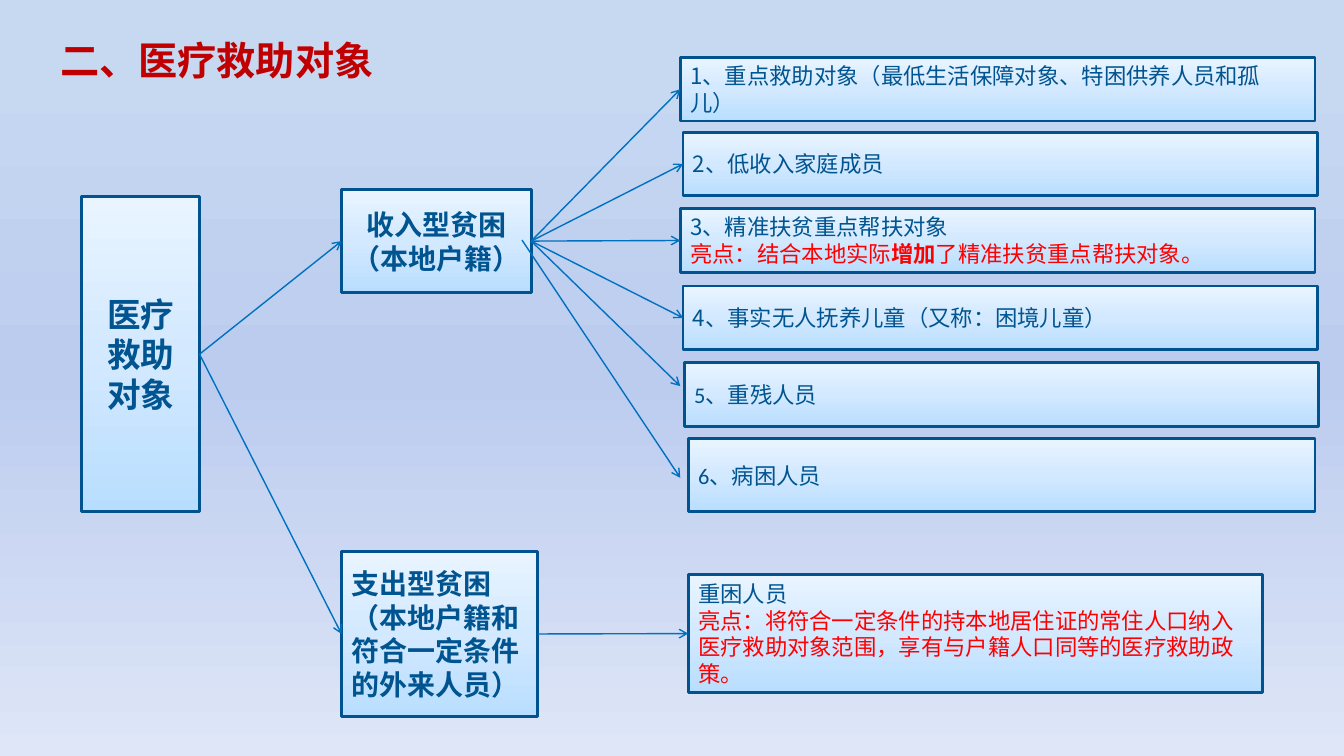
from lxml import etree
from pptx import Presentation
from pptx.dml.color import RGBColor
from pptx.enum.shapes import MSO_CONNECTOR, MSO_SHAPE
from pptx.enum.text import MSO_ANCHOR, MSO_AUTO_SIZE, PP_ALIGN
from pptx.oxml.ns import qn
from pptx.util import Cm, Pt

RECTANGLE = MSO_SHAPE.RECTANGLE
STRAIGHT = MSO_CONNECTOR.STRAIGHT
MIDDLE = MSO_ANCHOR.MIDDLE
GROW = MSO_AUTO_SIZE.SHAPE_TO_FIT_TEXT
LEFT, CENTER = PP_ALIGN.LEFT, PP_ALIGN.CENTER
LEFT_SIDE, RIGHT_SIDE = 1, 3

CJK_FONT = "Noto Sans CJK SC"
NAVY, RED, DARK_RED = "005490", "FF0000", "C00000"
BORDER, ARROW = "00538E", "0070C0"
BOX_STOPS = [(0, "B8DEFF"), (50, "D3E9FF"), (100, "E9F4FF")]
PAGE_STOPS = [(0, "C6D9F1"), (8, "C6D9F1"), (50, "BCCCEF"), (100, "DEE6F7")]

# Left, top, width, height in cm; paragraphs of (text, format) runs; font
CATEGORIES = [
    ((17.15, 1.45, 16, 1.6),
     [[("1、重点救助对象（最低生活保障对象、特困供养人员和孤儿）", {})]], CJK_FONT),
    ((17.22, 3.33, 16, 1.6), [[("2、低收入家庭成员", {})]], CJK_FONT),
    ((17.15, 5.26, 16, 1.6),
     [[("3、精准扶贫重点帮扶对象", {})],
      [("亮点：结合本地实际", {"color": RED}),
       ("增加", {"color": RED, "bold": True}),
       ("了精准扶贫重点帮扶对象。", {"color": RED})]], CJK_FONT),
    ((17.22, 7.21, 16, 1.6),
     [[("4、事实无人抚养儿童（又称：困境儿童）", {})]], CJK_FONT),
    ((17.25, 9.14, 15.98, 1.6), [[("5、重残人员", {})]], "Calibri"),
    ((17.35, 11.05, 15.8, 1.85), [[("6、病困人员", {})]], "Calibri"),
]
SEVERE_HARDSHIP = [
    [("重困人员", {})],
    [("亮点：将符合一定条件的持本地居住证的常住人口纳入医疗救助对象范围，"
      "享有与户籍人口同等的医疗救助政策。", {"color": RED})],
]


def rgb(color):
    return RGBColor.from_string(color)


def paint_gradient(owner, fill, angle, stops):
    """Fill with any number of stops; angle runs counter-clockwise."""
    fill.gradient()
    fill.gradient_angle = angle
    stop_list = owner.find(".//" + qn("a:gsLst"))
    for stop in list(stop_list):
        stop_list.remove(stop)
    for percent, color in stops:
        stop = etree.SubElement(stop_list, qn("a:gs"), pos=str(percent * 1000))
        etree.SubElement(stop, qn("a:srgbClr"), val=color)


def add_run(paragraph, text, size=16, color=NAVY, bold=False, font=CJK_FONT):
    run = paragraph.add_run()
    run.text = text
    run.font.size = Pt(size)
    run.font.bold = bold
    run.font.name = font
    run.font.color.rgb = rgb(color)
    etree.SubElement(run.font._element, qn("a:ea"), typeface=CJK_FONT)


def write_text(frame, paragraphs, align=LEFT, **base_format):
    for index, runs in enumerate(paragraphs):
        paragraph = frame.add_paragraph() if index else frame.paragraphs[0]
        paragraph.alignment = align
        for text, run_format in runs:
            add_run(paragraph, text, **{**base_format, **run_format})


def add_title(slide, text):
    title = slide.shapes.add_textbox(Cm(1.27), Cm(0.79), Cm(8.53), Cm(1.45))
    title.text_frame.word_wrap = False
    title.text_frame.auto_size = GROW
    write_text(title.text_frame, [[(text, {})]], size=28, color=DARK_RED, bold=True)


def add_box(slide, place, paragraphs, **text_format):
    box = slide.shapes.add_shape(RECTANGLE, *map(Cm, place))
    box.shadow.inherit = False
    paint_gradient(box._element, box.fill, 90, BOX_STOPS)
    box.line.color.rgb = rgb(BORDER)
    box.line.width = Pt(2)
    box.text_frame.word_wrap = True
    box.text_frame.vertical_anchor = MIDDLE
    write_text(box.text_frame, paragraphs, **text_format)
    return box


def add_arrow(slide, start=(0, 0), end=(0, 0), source=None, target=None):
    """Draw from start to end in cm; a given box replaces its point."""
    arrow = slide.shapes.add_connector(STRAIGHT, *map(Cm, (*start, *end)))
    if source is not None:
        arrow.begin_connect(source, RIGHT_SIDE)
    if target is not None:
        arrow.end_connect(target, LEFT_SIDE)
    arrow.line.color.rgb = rgb(ARROW)
    arrow.line.width = Pt(1)
    etree.SubElement(arrow.line._get_or_add_ln(), qn("a:tailEnd"), type="arrow")
    etree.SubElement(arrow._element.spPr, qn("a:effectLst"))


def main():
    deck = Presentation()
    deck.slide_width, deck.slide_height = Cm(33.88), Cm(19.05)
    slide = deck.slides.add_slide(deck.slide_layouts[6])
    paint_gradient(slide._element, slide.background.fill, 270, PAGE_STOPS)

    add_title(slide, "二、医疗救助对象")
    recipients = add_box(slide, (2.06, 4.95, 2.97, 7.95),
                         [[("医疗救助对象", {})]], align=CENTER, size=24, bold=True)
    income_poverty = add_box(slide, (8.61, 4.78, 4.78, 2.59),
                             [[("收入型贫困（本地户籍）", {})]],
                             align=CENTER, size=20, bold=True)
    expense_poverty = add_box(slide, (8.61, 13.89, 4.95, 4.17),
                              [[("支出型贫困（本地户籍和符合一定条件的外来人员）", {})]],
                              size=20, bold=True)
    categories = [add_box(slide, place, paragraphs, font=font)
                  for place, paragraphs, font in CATEGORIES]
    severe_hardship = add_box(slide, (17.35, 14.48, 14.48, 2.97), SEVERE_HARDSHIP)

    links = [(recipients, income_poverty), (recipients, expense_poverty),
             (expense_poverty, severe_hardship)]
    links += [(income_poverty, category) for category in categories[:4]]
    for source, target in links:
        add_arrow(slide, source=source, target=target)
    # The last two arrows stop short of their boxes
    add_arrow(slide, end=(17.15, 9.73), source=income_poverty)
    add_arrow(slide, start=(13.16, 6.05), end=(17.15, 12.04))

    deck.save("out.pptx")


if __name__ == "__main__":
    main()
